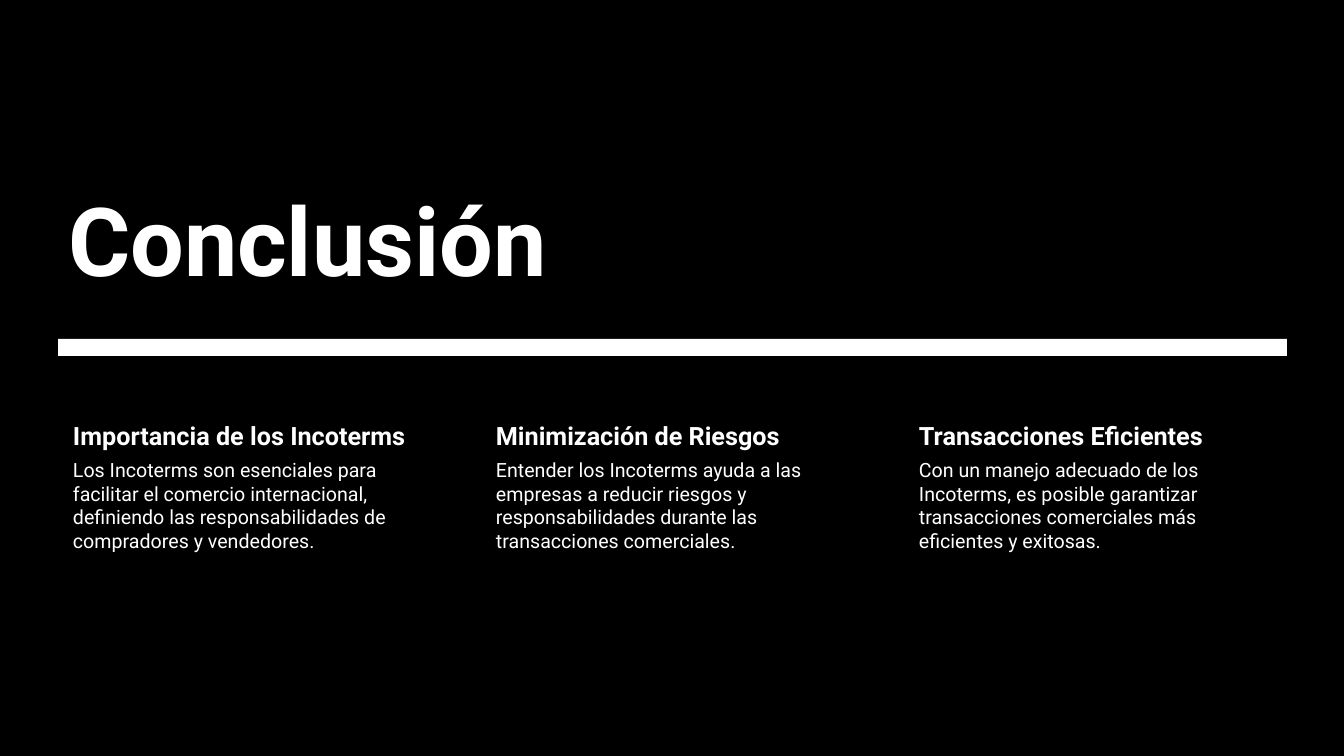
import dataclasses

import pptx
import pptx.dml.color
import pptx.enum.shapes
import pptx.enum.text
import pptx.util

EMU_PER_PX = 914400 / 100.8
WIDTH, HEIGHT = 1344, 756
MARGIN = 58
CONTENT_WIDTH = 1229

COLUMN_WIDTH = 384
COLUMN_PITCH = 423
HEADING_TOP, HEADING_HEIGHT = 417, 39
BODY_HEIGHT = 231

COLUMNS = [
    ("Importancia de los Incoterms",
     "Los Incoterms son esenciales para facilitar el comercio internacional, "
     "definiendo las responsabilidades de compradores y vendedores."),
    ("Minimización de Riesgos",
     "Entender los Incoterms ayuda a las empresas a reducir riesgos y "
     "responsabilidades durante las transacciones comerciales."),
    ("Transacciones Eficientes",
     "Con un manejo adecuado de los Incoterms, es posible garantizar "
     "transacciones comerciales más eficientes y exitosas."),
]


@dataclasses.dataclass(frozen=True)
class Theme:
    font: str = "Roboto"
    background: str = "000000"
    foreground: str = "FFFFFF"
    title_size: int = 68
    heading_size: int = 18
    body_size: int = 14


def px(n):
    return pptx.util.Emu(round(n * EMU_PER_PX))


def rgb(code):
    return pptx.dml.color.RGBColor.from_string(code)


class SlideBuilder:
    def __init__(self, s, theme):
        self.s = s
        self.theme = theme

    def background(self):
        fill = self.s.background.fill
        fill.solid()
        fill.fore_color.rgb = rgb(self.theme.background)

    def rect(self, x, y, w, h, color):
        sp = self.s.shapes.add_shape(
            pptx.enum.shapes.MSO_SHAPE.RECTANGLE, px(x), px(y), px(w), px(h))
        sp.shadow.inherit = False
        sp.fill.solid()
        sp.fill.fore_color.rgb = rgb(color)
        sp.line.fill.background()

    def text(self, x, y, w, h, content, size, insets, bold=False,
             anchor=pptx.enum.text.MSO_ANCHOR.TOP):
        """Add one paragraph; insets are left, top, right, bottom in px."""
        tf = self.s.shapes.add_textbox(px(x), px(y), px(w), px(h)).text_frame
        tf.word_wrap = True
        tf.vertical_anchor = anchor
        (tf.margin_left, tf.margin_top,
         tf.margin_right, tf.margin_bottom) = map(px, insets)
        r = tf.paragraphs[0].add_run()
        r.text = content
        r.font.name = self.theme.font
        r.font.size = pptx.util.Pt(size)
        r.font.bold = bold
        r.font.color.rgb = rgb(self.theme.foreground)

    def column(self, x, heading, body):
        self.text(x, HEADING_TOP, COLUMN_WIDTH, HEADING_HEIGHT, heading,
                  self.theme.heading_size, (15, 3, 3, 3), bold=True)
        self.text(x, HEADING_TOP + HEADING_HEIGHT, COLUMN_WIDTH, BODY_HEIGHT,
                  body, self.theme.body_size, (15, 2, 2, 2))


def main():
    prs = pptx.Presentation()
    prs.slide_width, prs.slide_height = px(WIDTH), px(HEIGHT)
    theme = Theme()
    slide = SlideBuilder(prs.slides.add_slide(prs.slide_layouts[6]), theme)

    slide.background()
    slide.rect(0, 0, WIDTH, HEIGHT, theme.background)
    slide.rect(MARGIN, 339, CONTENT_WIDTH, 17, theme.foreground)
    slide.text(MARGIN, 146, CONTENT_WIDTH, 155, "Conclusión",
               theme.title_size, (10, 5, 10, 5), bold=True,
               anchor=pptx.enum.text.MSO_ANCHOR.BOTTOM)
    for i, (heading, body) in enumerate(COLUMNS):
        slide.column(MARGIN + i * COLUMN_PITCH, heading, body)

    prs.save("out.pptx")


if __name__ == "__main__":
    main()
